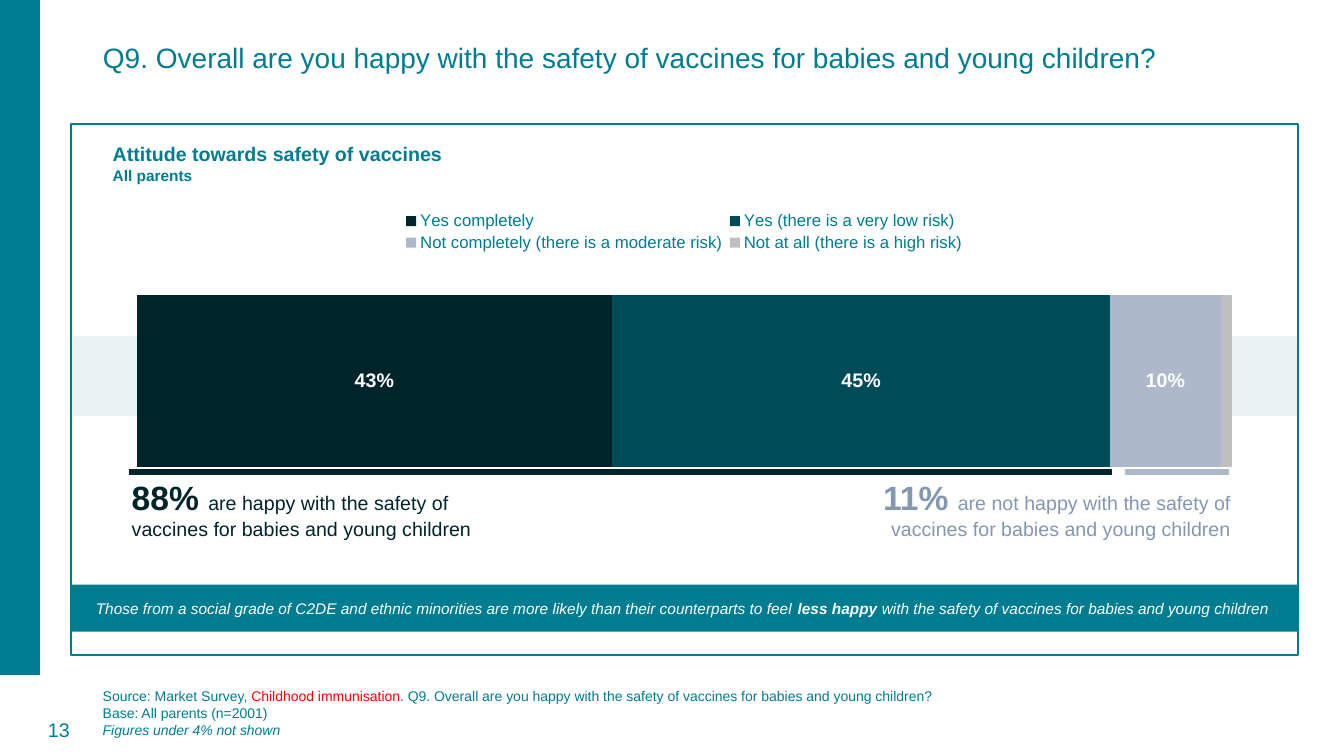
"""Build the slide on parents' attitude towards vaccine safety."""
from math import cos, pi, sin

from pptx import Presentation
from pptx.chart.data import CategoryChartData
from pptx.dml.color import RGBColor
from pptx.enum.chart import XL_CHART_TYPE, XL_LABEL_POSITION, XL_LEGEND_POSITION
from pptx.enum.shapes import MSO_CONNECTOR, MSO_SHAPE
from pptx.enum.text import MSO_ANCHOR, PP_ALIGN
from pptx.oxml import parse_xml
from pptx.oxml.ns import nsdecls, qn
from pptx.util import Cm, Pt

TEAL, DARK, PALE, WHITE = "007C91", "00242A", "ADB9CA", "FFFFFF"
LEFT, CENTER, RIGHT = PP_ALIGN.LEFT, PP_ALIGN.CENTER, PP_ALIGN.RIGHT


def rgb(value):
    return RGBColor.from_string(value)


def style(font, size, color, bold=None, italic=None):
    font.name, font.size, font.bold, font.italic = "Arial", Pt(size), bold, italic
    font.color.rgb = rgb(color)


prs = Presentation()
prs.slide_width, prs.slide_height = Cm(33.87), Cm(19.05)
s = prs.slides.add_slide(prs.slide_layouts[5])

title = s.shapes.title
title.left, title.top, title.width, title.height = Cm(2.34), Cm(0.03), Cm(29.21), Cm(3.68)
tf = title.text_frame
tf.text = "Q9. Overall are you happy with the safety of vaccines for babies and young children?"
tf.vertical_anchor = MSO_ANCHOR.MIDDLE
tf.margin_bottom = Cm(0.89)
p = tf.paragraphs[0]
p.alignment, p.line_spacing = LEFT, 0.9
style(p.font, 20, TEAL)

radius, corner_top = 1.17, 16.13
arc = [(radius * cos(i * pi / 48), corner_top + radius * sin(i * pi / 48)) for i in range(25)]
fb = s.shapes.build_freeform(0, 0, scale=Cm(1))
fb.add_line_segments([(radius, 0)] + arc)
side = fb.convert_to_shape()
side.shadow.inherit = False
side.fill.solid()
side.fill.fore_color.rgb = rgb(TEAL)
side.line.color.rgb = rgb(TEAL)
side.line.width = Pt(1)

panels = []
for top, height, fill in [(8.48, 2.01, "ECF1F4"), (3.12, 13.39, None), (14.73, 1.19, TEAL)]:
    sp = s.shapes.add_shape(MSO_SHAPE.RECTANGLE, Cm(1.8), Cm(top), Cm(30.91), Cm(height))
    sp.shadow.inherit = False
    if fill:
        sp.fill.solid()
        sp.fill.fore_color.rgb = rgb(fill)
        sp.line.fill.background()
    else:
        sp.fill.background()
        sp.line.color.rgb = rgb(TEAL)
        sp.line.width = Pt(1.5)
    panels.append(sp)

tf = panels[-1].text_frame
tf.vertical_anchor = MSO_ANCHOR.MIDDLE
p = tf.paragraphs[0]
p.alignment = CENTER
for text, bold in [
    ("Those from a social grade of C2DE and ethnic minorities are more likely than their counterparts to feel ", False),
    ("less happy ", True),
    ("with the safety of vaccines for babies and young children ", False),
]:
    r = p.add_run()
    r.text = text
    style(r.font, 11, WHITE, bold, True)

series = [
    ("Yes completely", 0.43, DARK),
    ("Yes (there is a very low risk)", 0.45, "004B58"),
    ("Not completely (there is a moderate risk)", 0.10, PALE),
    ("Not at all (there is a high risk)", 0.01, "BFBFBF"),
]
data = CategoryChartData(number_format="0%")
data.categories = ["1"]
for name, share, color in series:
    data.add_series(name, [share])
chart = s.shapes.add_chart(XL_CHART_TYPE.BAR_STACKED_100, Cm(2.87), Cm(5.03),
                           Cm(28.75), Cm(7.75), data).chart
style(chart.font, 10, "000000")
chart.has_title = False
chart.has_legend = True
legend = chart.legend
legend.position = XL_LEGEND_POSITION.TOP
legend.include_in_layout = False
style(legend.font, 12, TEAL)
chart.value_axis.has_major_gridlines = False
chart.value_axis.maximum_scale = 1
chart.value_axis.visible = False
chart.category_axis.visible = False

plot = chart.plots[0]
plot.gap_width, plot.overlap, plot.vary_by_categories = 40, 100, False
for ser, (name, share, color) in zip(plot.series, series):
    ser.format.fill.solid()
    ser.format.fill.fore_color.rgb = rgb(color)
    if share >= 0.04:
        labels = ser.data_labels
        labels.show_value = True
        labels.position = XL_LABEL_POSITION.CENTER
        labels.number_format, labels.number_format_is_linked = "0%", False
        style(labels.font, 14, WHITE, True)

plot_area = chart.element.find(".//" + qn("c:plotArea"))
legend_el = chart.element.find(".//" + qn("c:legend"))
for el, index, target, box in [
    (plot_area, 0, '<c:layoutTarget val="inner"/>', (0.02, 0.2, 0.96, 0.78)),
    (legend_el, 1, "", (0.25, 0.03, 0.5, 0.15)),
]:
    for old in el.findall(qn("c:layout")):
        el.remove(old)
    modes = '<c:xMode val="edge"/><c:yMode val="edge"/>'
    sizes = "".join(f'<c:{tag} val="{value}"/>' for tag, value in zip("xywh", box))
    el.insert(index, parse_xml(
        f'<c:layout {nsdecls("c")}><c:manualLayout>{target}{modes}{sizes}</c:manualLayout></c:layout>'))

for start, end, color in [(3.25, 28.02, DARK), (28.35, 30.96, PALE)]:
    line = s.shapes.add_connector(MSO_CONNECTOR.STRAIGHT, Cm(start), Cm(11.89), Cm(end), Cm(11.89))
    line.line.color.rgb = rgb(color)
    line.line.width = Pt(4.5)
    line._element.spPr.append(parse_xml(f'<a:effectLst {nsdecls("a")}/>'))

happy = "happy with the safety of vaccines for babies and young children"
boxes = [
    ((2.59, 3.45, 8.84, 1.32), LEFT, [
        [("Attitude towards safety of vaccines", 14, TEAL, True)],
        [("All parents", 11, TEAL, True)]]),
    ((3.07, 12.37, 9.91, 0.91), LEFT, [
        [("88% ", 24, DARK, True), (f"are {happy}", 14, DARK)]]),
    ((21.36, 12.37, 9.91, 0.91), RIGHT, [
        [("11% ", 24, "8497B0", True), (f"are not {happy}", 14, "8497B0")]]),
    ((2.34, 17.45, 29.46, 1.02), LEFT, [
        [("Source: Market Survey, ", 10, TEAL), ("Childhood immunisation", 10, "FF0000"),
         (f". {title.text_frame.text}", 10, TEAL)],
        [("Base: All parents (n=2001)", 10, TEAL)],
        [("Figures under 4% not shown", 10, TEAL, False, True)]]),
    ((0.36, 17.88, 1.65, 1.02), RIGHT, [[("13", 14, TEAL)]]),
]
for place, align, paragraphs in boxes:
    tf = s.shapes.add_textbox(*[Cm(v) for v in place]).text_frame
    tf.word_wrap = True
    tf.vertical_anchor = MSO_ANCHOR.MIDDLE
    for i, runs in enumerate(paragraphs):
        p = tf.add_paragraph() if i else tf.paragraphs[0]
        p.alignment = align
        if len(runs) == 1:
            style(p.font, *runs[0][1:])
        for text, *look in runs:
            r = p.add_run()
            r.text = text
            if len(runs) > 1:
                style(r.font, *look)

prs.save("out.pptx")
